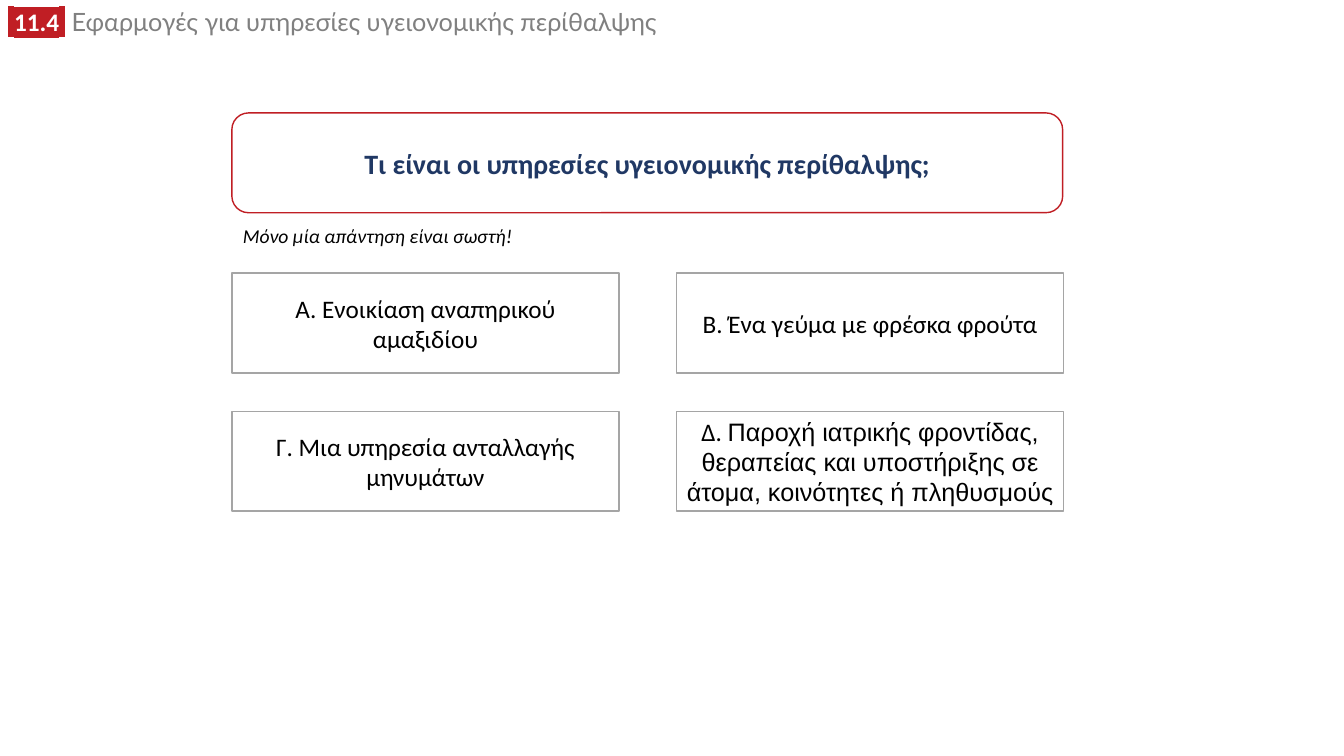
from lxml.etree import SubElement
from pptx import Presentation
from pptx.dml.color import RGBColor
from pptx.enum.shapes import MSO_SHAPE
from pptx.enum.text import MSO_ANCHOR, MSO_AUTO_SIZE, PP_ALIGN
from pptx.oxml.ns import qn
from pptx.util import Pt

EMU_PER_PX = 9144  # 100 px to the inch

WHITE = RGBColor(0xFF, 0xFF, 0xFF)
BLACK = RGBColor(0x00, 0x00, 0x00)
RED = RGBColor(0xC0, 0x1E, 0x24)
NAVY = RGBColor(0x20, 0x38, 0x64)
TITLE_GREY = RGBColor(0x80, 0x80, 0x80)
BORDER_GREY = RGBColor(0xA5, 0xA5, 0xA5)


class QuizPage:
    body_font = "Calibri"
    header_font = "Lato"

    def __init__(self, page):
        self.page = page

    def place(self, *lengths):
        return [length * EMU_PER_PX for length in lengths]

    def span(self, para, text, size=18, color=BLACK, font=None,
             bold=False, italic=False, highlight=None):
        run = para.add_run()
        run.text = text
        run.font.size = Pt(size)
        run.font.bold = bold
        run.font.italic = italic
        run.font.color.rgb = color
        if highlight is not None:
            properties = run._r.get_or_add_rPr()
            mark = SubElement(properties, qn("a:highlight"))
            SubElement(mark, qn("a:srgbClr"), val=str(highlight))
        run.font.name = font or self.body_font

    def text(self, left, top, width, height, wrap=True):
        """Add a growing text box and return its first paragraph."""
        box = self.page.shapes.add_textbox(*self.place(left, top, width, height))
        box.text_frame.word_wrap = wrap
        box.text_frame.auto_size = MSO_AUTO_SIZE.SHAPE_TO_FIT_TEXT
        return box.text_frame.paragraphs[0]

    def card(self, preset, left, top, width, height, border):
        """Add an outlined white box and return its centred paragraph."""
        box = self.page.shapes.add_shape(preset, *self.place(left, top, width, height))
        box.shadow.inherit = False
        box.fill.solid()
        box.fill.fore_color.rgb = WHITE
        box.line.color.rgb = border
        box.line.width = Pt(1)
        box.text_frame.word_wrap = True
        box.text_frame.vertical_anchor = MSO_ANCHOR.MIDDLE
        para = box.text_frame.paragraphs[0]
        para.alignment = PP_ALIGN.CENTER
        return para


def main():
    deck = Presentation()
    deck.slide_width, deck.slide_height = 1333 * EMU_PER_PX, 750 * EMU_PER_PX
    quiz = QuizPage(deck.slides.add_slide(deck.slide_layouts[6]))

    header = quiz.text(-2, 7, 952, 35)
    header.line_spacing = 0.8
    for text, font in ((" ", quiz.header_font), ("11.4", quiz.body_font),
                       (" ", quiz.header_font)):
        quiz.span(header, text, color=WHITE, font=font, bold=True, highlight=RED)
    quiz.span(header, " Εφαρμογές για υπηρεσίες υγειονομικής περίθαλψης",
              color=TITLE_GREY, font=quiz.header_font)

    left, card_height = 230, 99
    question = quiz.card(MSO_SHAPE.ROUNDED_RECTANGLE, left, 112, 824, card_height, RED)
    quiz.span(question, "Τι είναι οι υπηρεσίες υγειονομικής περίθαλψης;",
              size=20, color=NAVY, bold=True)

    answers = [
        [("A. Ενοικίαση αναπηρικού αμαξιδίου", quiz.body_font)],
        [("B. Ένα γεύμα με φρέσκα φρούτα", quiz.body_font)],
        [("Γ. Μια υπηρεσία ανταλλαγής μηνυμάτων", quiz.body_font)],
        [("Δ. ", quiz.body_font),
         ("Παροχή ιατρικής φροντίδας, θεραπείας και υποστήριξης σε άτομα, "
          "κοινότητες ή πληθυσμούς", "Arial")],
    ]
    for index, spans in enumerate(answers):
        row, column = divmod(index, 2)
        answer = quiz.card(MSO_SHAPE.RECTANGLE, left + column * 441, 271 + row * 137,
                           384, card_height, BORDER_GREY)
        for text, font in spans:
            quiz.span(answer, text, font=font)

    hint = quiz.text(231, 217, 289, 34, wrap=False)
    quiz.span(hint, "Μόνο μία απάντηση είναι σωστή!", size=14, italic=True)

    deck.save("out.pptx")


if __name__ == "__main__":
    main()
